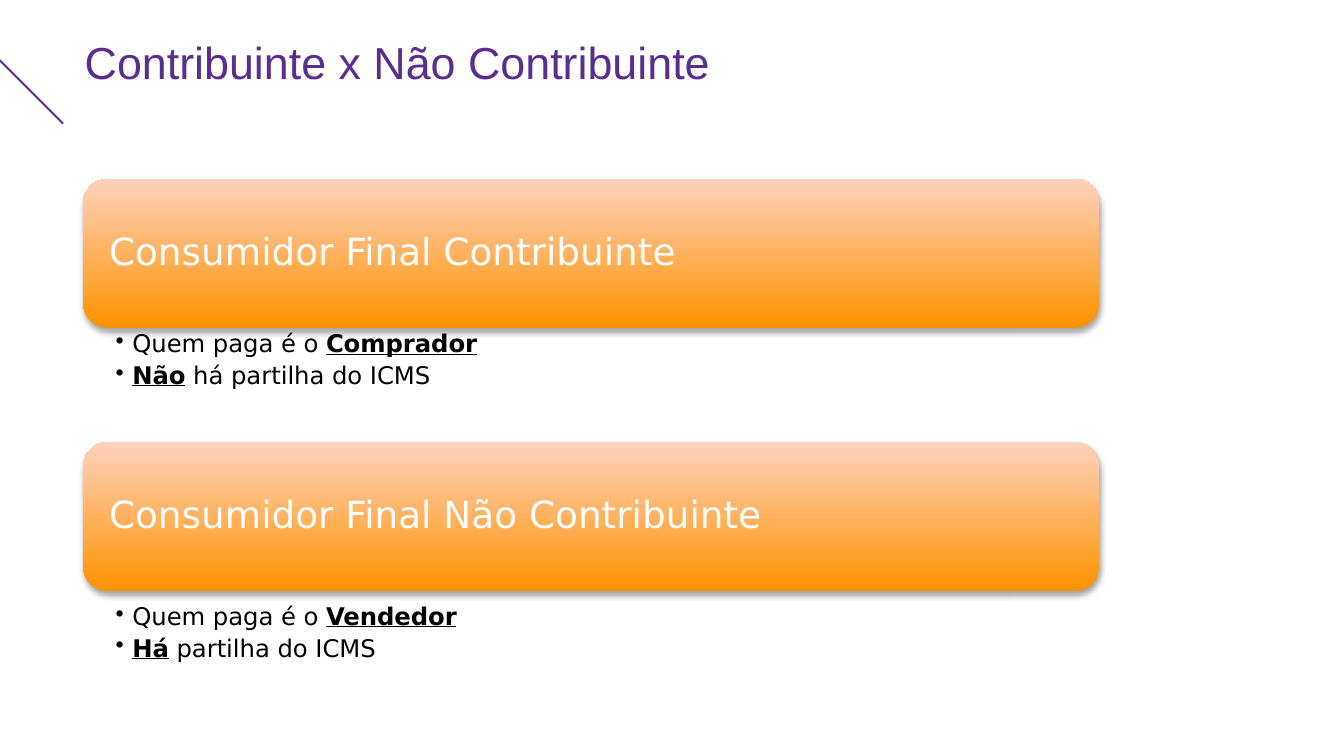
from pptx import Presentation
from pptx import util as u
from pptx.dml.color import RGBColor
from pptx.enum import shapes, text
from pptx.oxml import parse_xml
from pptx.oxml.ns import nsdecls

PURPLE = RGBColor(0x5A, 0x2D, 0x91)
ORANGE = RGBColor(0xFF, 0x92, 0x00)
PEACH = RGBColor(0xFF, 0xD2, 0xBD)
WHITE = RGBColor(0xFF, 0xFF, 0xFF)
BLACK = RGBColor(0x00, 0x00, 0x00)

LEFT, WIDTH = 44.64, 544.32
BAR_HEIGHT, LIST_HEIGHT = 79.92, 70.56

GROUPS = [
    (95.76, 176.4, "Consumidor Final Contribuinte", [
        [("Quem paga é o ", False), ("Comprador", True)],
        [("Não", True), (" há partilha do ICMS", False)],
    ]),
    (236.88, 322.56, "Consumidor Final Não Contribuinte", [
        [("Quem paga é o ", False), ("Vendedor", True)],
        [("Há", True), (" partilha do ICMS", False)],
    ]),
]


def add_span(para, words, size, color, font="DejaVu Sans", strong=False):
    span = para.add_run()
    span.text = words
    span.font.name = font
    span.font.size = u.Pt(size)
    span.font.color.rgb = color
    span.font.bold = strong
    span.font.underline = strong


def set_frame(frame, left, top, right, bottom, anchor):
    frame.word_wrap = True
    frame.auto_size = text.MSO_AUTO_SIZE.NONE
    frame.vertical_anchor = anchor
    frame.margin_left, frame.margin_top = u.Pt(left), u.Pt(top)
    frame.margin_right, frame.margin_bottom = u.Pt(right), u.Pt(bottom)


def set_title(page, words):
    title = page.shapes.title
    title.left, title.top = u.Pt(38.16), u.Pt(12.96)
    title.width, title.height = u.Pt(646.56), u.Pt(31.68)
    set_frame(title.text_frame, 7.2, 5.6, 7.2, 3.6, text.MSO_ANCHOR.TOP)
    para = title.text_frame.paragraphs[0]
    para.alignment = text.PP_ALIGN.LEFT
    add_span(para, words, 24, PURPLE, font="Arial")


def add_accent_line(page):
    line = page.shapes.add_connector(
        shapes.MSO_CONNECTOR.STRAIGHT,
        u.Pt(-3.6), u.Pt(28.8), u.Pt(33.84), u.Pt(66.24))
    line.line.color.rgb = PURPLE
    line.line.width = u.Pt(1)
    line._element.spPr.append(parse_xml(f"<a:effectLst {nsdecls('a')}/>"))


def add_shadow(box):
    box._element.spPr.append(parse_xml(
        f"<a:effectLst {nsdecls('a')}>"
        '<a:outerShdw blurRad="40000" dist="23000" dir="5400000" rotWithShape="0">'
        '<a:srgbClr val="000000"><a:alpha val="35000"/></a:srgbClr>'
        "</a:outerShdw></a:effectLst>"))


def add_bar(page, top, words):
    bar = page.shapes.add_shape(
        shapes.MSO_SHAPE.ROUNDED_RECTANGLE,
        u.Pt(LEFT), u.Pt(top), u.Pt(WIDTH), u.Pt(BAR_HEIGHT))
    bar.fill.gradient()
    bar.fill.gradient_angle = 90
    for stop, color in zip(bar.fill.gradient_stops, (ORANGE, PEACH)):
        stop.color.rgb = color
    bar.line.fill.background()
    add_shadow(bar)
    set_frame(bar.text_frame, 9.9, 9.6, 9.9, 9.6, text.MSO_ANCHOR.MIDDLE)
    para = bar.text_frame.paragraphs[0]
    para.alignment = text.PP_ALIGN.LEFT
    para.line_spacing = 0.9
    add_span(para, words, 20, WHITE)


def add_bullets(page, top, items):
    box = page.shapes.add_textbox(
        u.Pt(LEFT), u.Pt(top), u.Pt(WIDTH), u.Pt(LIST_HEIGHT))
    frame = box.text_frame
    set_frame(frame, 17.28, 1.44, 7.2, 1.44, text.MSO_ANCHOR.TOP)
    for index, spans in enumerate(items):
        para = frame.add_paragraph() if index else frame.paragraphs[0]
        para.level = 1
        para.line_spacing = 0.9
        para.space_after = u.Pt(3)
        properties = para._p.get_or_add_pPr()
        properties.set("marL", str(u.Pt(9)))
        properties.set("indent", str(u.Pt(-9)))
        properties.append(parse_xml(f'<a:buChar {nsdecls("a")} char="•"/>'))
        for words, strong in spans:
            add_span(para, words, 13, BLACK, strong=strong)


def main():
    deck = Presentation()
    deck.slide_width, deck.slide_height = u.Pt(720), u.Pt(405)
    page = deck.slides.add_slide(deck.slide_layouts[5])
    add_accent_line(page)
    set_title(page, "Contribuinte x Não Contribuinte")
    for bar_top, list_top, heading, items in GROUPS:
        add_bar(page, bar_top, heading)
        add_bullets(page, list_top, items)
    deck.save("out.pptx")


if __name__ == "__main__":
    main()
